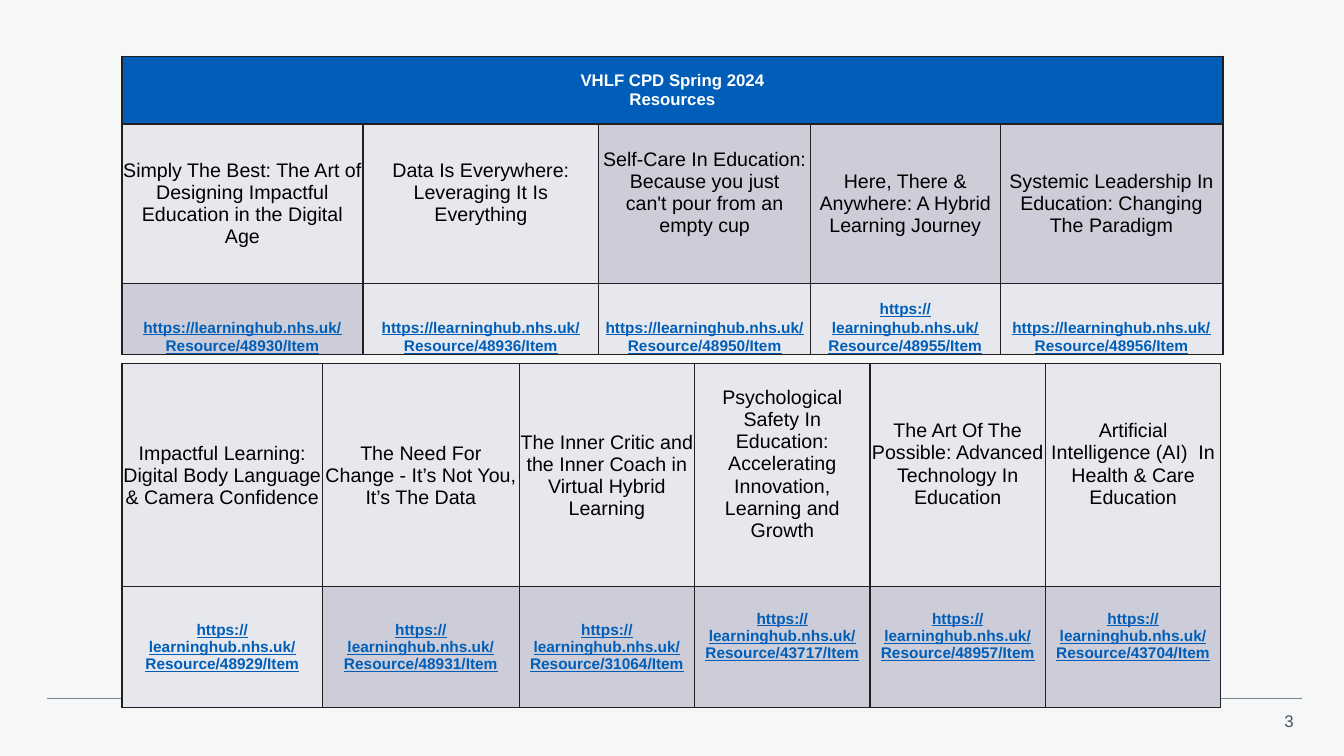
from lxml import etree
from pptx import Presentation
from pptx.dml.color import RGBColor
from pptx.enum.shapes import MSO_CONNECTOR
from pptx.enum.text import MSO_ANCHOR, PP_ALIGN
from pptx.oxml.ns import qn
from pptx.util import Inches, Pt

MIDDLE, BOTTOM = MSO_ANCHOR.MIDDLE, MSO_ANCHOR.BOTTOM
CENTER, RIGHT = PP_ALIGN.CENTER, PP_ALIGN.RIGHT
STRAIGHT = MSO_CONNECTOR.STRAIGHT
BLUE, INK, PALE, GREY = "005EB8", "231F20", "E7E8ED", "CCCDD9"
SLIDE_W, SLIDE_H = 13.33, 7.5
GRID_W = 10.91
GRID_LEFT = (SLIDE_W - GRID_W) / 2
RAISED = 0.22

HEADER = {"size": Pt(12), "bold": True, "color": "FFFFFF"}
TOPIC = {"size": Pt(14), "bold": False, "color": "000000"}
LINK = {"size": Pt(11), "bold": True, "underline": True, "color": BLUE}
FOOTER = {"size": Pt(12), "color": "425563"}


def write(frame, text, style, align=CENTER, spacing=None):
    frame.text = text
    for paragraph in frame.paragraphs:
        paragraph.alignment = align
        paragraph.line_spacing = spacing
        paragraph.font.name = "Arial"
        for run in paragraph.runs:
            run.font.name = "Arial"
            for key, value in style.items():
                if key == "color":
                    run.font.color.rgb = RGBColor.from_string(value)
                else:
                    setattr(run.font, key, value)


def format_cell(cell, fill, anchor=MIDDLE, side=0.01, bottom=0):
    properties = cell._tc.get_or_add_tcPr()
    for edge in ("lnL", "lnR", "lnT", "lnB"):
        border = etree.SubElement(properties, qn(f"a:{edge}"), w=str(Pt(1)))
        solid = etree.SubElement(border, qn("a:solidFill"))
        etree.SubElement(solid, qn("a:srgbClr"), val=INK)
    cell.fill.solid()
    cell.fill.fore_color.rgb = RGBColor.from_string(fill)
    cell.vertical_anchor = anchor
    cell.margin_left = cell.margin_right = Inches(side)
    cell.margin_top = 0
    cell.margin_bottom = Inches(bottom)


spring = [
    (2.39, "Simply The Best: The Art of Designing Impactful\nEducation in the Digital Age", PALE, 0, 48930, GREY),
    (2.34, "Data Is Everywhere: Leveraging It Is\nEverything", PALE, RAISED, 48936, PALE),
    (2.1, "Self-Care In Education: Because you just\ncan't pour from an empty cup", GREY, RAISED, 48950, PALE),
    (1.88, "Here, There & Anywhere: A Hybrid Learning Journey", GREY, 0, 48955, PALE),
    (2.21, "Systemic Leadership In Education: Changing The Paradigm", GREY, 0, 48956, PALE),
]
further = [
    (1.99, "Impactful Learning: Digital Body Language\n& Camera Confidence", PALE, 0, 48929, PALE),
    (1.95, "The Need For Change - It’s Not You, It’s The Data", PALE, 0, 48931, GREY),
    (1.74, "The Inner Critic and the Inner Coach in Virtual Hybrid Learning", PALE, 0, 31064, GREY),
    (1.74, "Psychological Safety In\nEducation: Accelerating Innovation, Learning and Growth", PALE, RAISED, 43717, GREY),
    (1.74, "The Art Of The Possible: Advanced Technology In Education", PALE, RAISED, 48957, GREY),
    (1.74, "Artificial Intelligence (AI)  In Health & Care Education", PALE, RAISED, 43704, GREY),
]
grids = [
    (spring, 0.56, [0.67, 1.58, 0.71], BOTTOM, 0, 1.07),
    (further, 3.61, [2.21, 1.2], MIDDLE, 0.02, None),
]

deck = Presentation()
deck.slide_width, deck.slide_height = Inches(SLIDE_W), Inches(SLIDE_H)
slide = deck.slides.add_slide(deck.slide_layouts[6])
slide.background.fill.solid()
slide.background.fill.fore_color.rgb = RGBColor.from_string("F6F8F8")

page_number = slide.shapes.add_textbox(Inches(12.52), Inches(7), Inches(0.41), Inches(0.3))
write(page_number.text_frame, "3", FOOTER, RIGHT)

footer_rule = slide.shapes.add_connector(
    STRAIGHT, Inches(0.47), Inches(6.93), Inches(12.91), Inches(6.93))
footer_rule.line.color.rgb = RGBColor.from_string("768692")
footer_rule.line.width = Pt(0.5)
etree.SubElement(footer_rule._element.spPr, qn("a:effectLst"))

for sessions, top, heights, link_anchor, link_side, link_spacing in grids:
    grid = slide.shapes.add_table(
        len(heights), len(sessions), Inches(GRID_LEFT), Inches(top),
        Inches(GRID_W), Inches(sum(heights))).table
    for row, height in zip(grid.rows, heights):
        row.height = Inches(height)
    topic_row, link_row = len(heights) - 2, len(heights) - 1
    for column, (width, topic, topic_fill, lift, item, link_fill) in enumerate(sessions):
        grid.columns[column].width = Inches(width)
        topic_cell = grid.cell(topic_row, column)
        format_cell(topic_cell, topic_fill, bottom=lift)
        write(topic_cell.text_frame, topic, TOPIC)
        link_cell = grid.cell(link_row, column)
        link_lift = lift if link_anchor == MIDDLE else 0
        format_cell(link_cell, link_fill, link_anchor, link_side, link_lift)
        write(link_cell.text_frame, f"https://learninghub.nhs.uk/Resource/{item}/Item",
              LINK, spacing=link_spacing)
    if topic_row:
        for header_cell in grid.rows[0].cells:
            format_cell(header_cell, BLUE)
        banner = grid.cell(0, 0)
        banner.merge(grid.cell(0, len(sessions) - 1))
        write(banner.text_frame, "VHLF CPD Spring 2024\nResources", HEADER)

deck.save("out.pptx")
